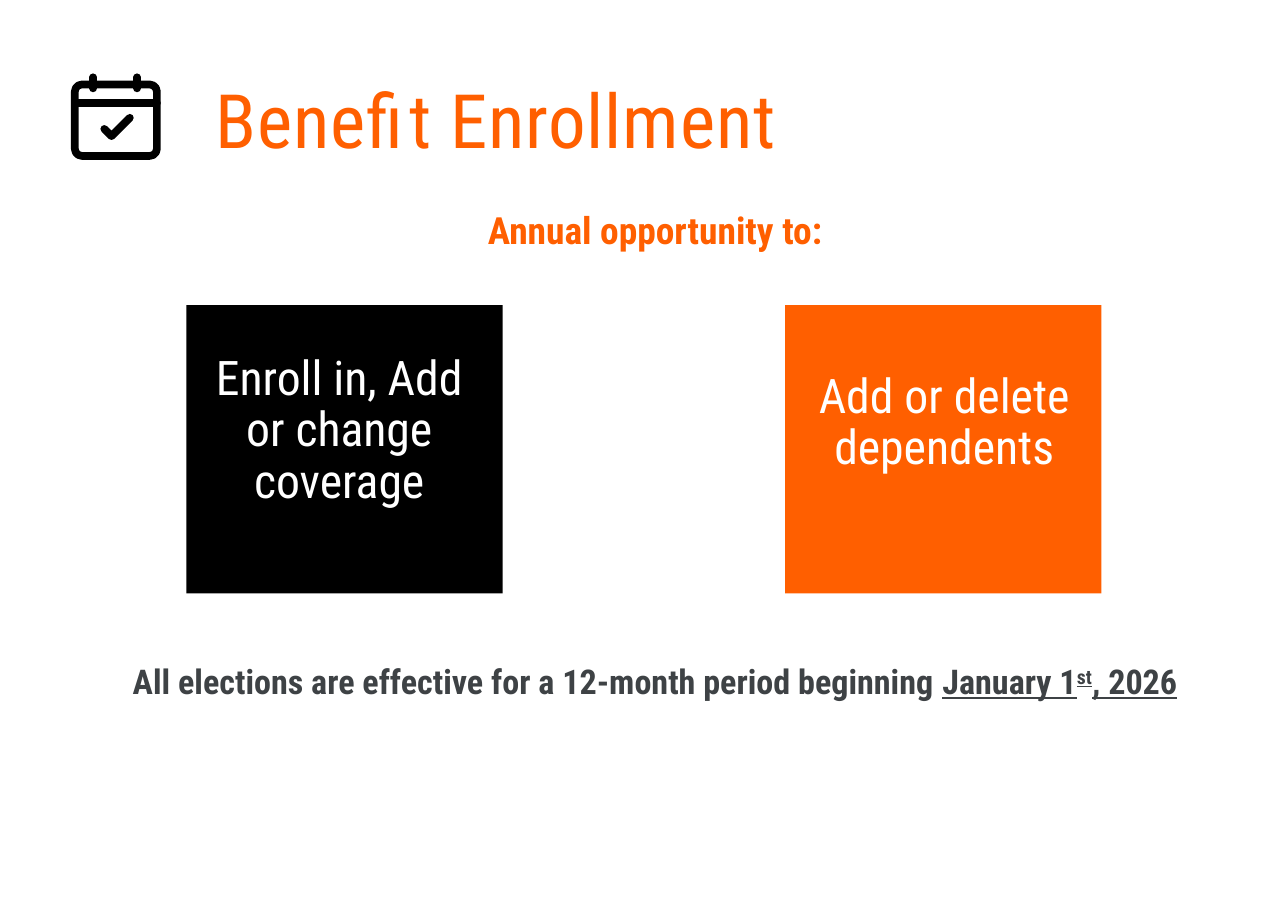
from lxml.etree import SubElement as Sub
from pptx import Presentation
from pptx.dml.color import RGBColor as RGB
from pptx.enum.shapes import MSO_CONNECTOR as Link, MSO_SHAPE as Kind
from pptx.enum.text import MSO_ANCHOR as Anchor, PP_ALIGN as Align
from pptx.oxml.ns import qn
from pptx.util import Cm, Pt

ORANGE = RGB(0xFF, 0x5F, 0x00)
BLACK = RGB(0x00, 0x00, 0x00)
WHITE = RGB(0xFF, 0xFF, 0xFF)
GREY = RGB(0x3E, 0x42, 0x45)
FONT = "Roboto Condensed"


def add_run(para, text, size, color, bold=False, under=False, **attrs):
    """Add one run; attrs are extra run properties such as spc or baseline."""
    run = para.add_run()
    run.text = text
    font = run.font
    font.name, font.size, font.bold = FONT, Pt(size), bold
    font.color.rgb = color
    if under:
        font.underline = True
    for name, value in attrs.items():
        run._r.get_or_add_rPr().set(name, str(value))


def add_text(slide, box, gap, align=Align.CENTER, top=0):
    """Add a text box and return its paragraph, ready for runs."""
    frame = slide.shapes.add_textbox(*map(Cm, box)).text_frame
    frame.word_wrap = True
    frame.margin_left = frame.margin_right = frame.margin_bottom = 0
    frame.margin_top = Cm(top)
    para = frame.paragraphs[0]
    para.alignment, para.line_spacing = align, gap
    return para


def add_rect(group, box, color):
    rect = group.shapes.add_shape(Kind.RECTANGLE, *map(Cm, box))
    rect.shadow.inherit = False
    rect.fill.solid()
    rect.fill.fore_color.rgb = color
    rect.line.fill.background()
    return rect


def add_tile(slide, left, color, label, text):
    """Group a colour square with the label panel that lies on it."""
    group = slide.shapes.add_group_shape()
    add_rect(group, (left, 6.32, 6.55, 5.97), color)
    frame = add_rect(group, label, color).text_frame
    frame.word_wrap = True
    frame.vertical_anchor = Anchor.MIDDLE
    para = frame.paragraphs[0]
    para.alignment, para.line_spacing = Align.CENTER, 0.9
    add_run(para, text, 28, WHITE)


def ink(shape):
    """Give a shape the thick, round black stroke of the icon."""
    shape.line.color.rgb = BLACK
    shape.line.width = Pt(4.5)
    stroke = shape.line._get_or_add_ln()
    stroke.set("cap", "rnd")
    Sub(stroke, qn("a:round"))


def add_line(group, *ends):
    line = group.shapes.add_connector(Link.STRAIGHT, *map(Cm, ends))
    ink(line)
    Sub(line._element.spPr, qn("a:effectLst"))


def add_icon(slide):
    group = slide.shapes.add_group_shape()
    page = group.shapes.add_shape(
        Kind.ROUNDED_RECTANGLE, Cm(1.55), Cm(1.75), Cm(1.7), Cm(1.48))
    page.adjustments[0] = 0.1
    pen = group.shapes.build_freeform(Cm(2.16), Cm(2.67))
    pen.add_line_segments(
        [(Cm(2.31), Cm(2.82)), (Cm(2.69), Cm(2.44))], close=False)
    for shape in (page, pen.convert_to_shape()):
        shape.fill.background()
        ink(shape)
        shape.shadow.inherit = False
    add_line(group, 1.55, 2.13, 3.25, 2.13)
    for ring in (1.93, 2.84):
        add_line(group, ring, 1.6, ring, 1.83)


def main():
    deck = Presentation()
    deck.slide_width, deck.slide_height = Cm(26.67), Cm(19.05)
    slide = deck.slides.add_slide(deck.slide_layouts[6])

    title = add_text(slide, (4.47, 1.7, 19.69, 1.27), 0.83, Align.LEFT, 0.13)
    add_run(title, "Benefit Enrollment", 44, ORANGE, spc=50)
    intro = add_text(slide, (1.5, 4.39, 24.13, 1), 0.9)
    add_run(intro, "Annual opportunity to:", 22, ORANGE, bold=True)

    add_tile(slide, 3.86, BLACK, (4.14, 7.19, 5.77, 3.48),
             "Enroll in, Add or change coverage")
    add_tile(slide, 16.26, ORANGE, (16.59, 7.57, 5.92, 2.41),
             "Add or delete dependents")

    note = add_text(slide, (1.5, 13.77, 24.13, 1), 0.9)
    add_run(note, "All elections are effective for a 12-month period beginning ",
            20, GREY, bold=True)
    add_run(note, "January 1", 20, GREY, bold=True, under=True)
    add_run(note, "st", 20, GREY, bold=True, under=True, baseline=30000)
    add_run(note, ", 2026", 20, GREY, bold=True, under=True)

    add_icon(slide)
    deck.save("out.pptx")


if __name__ == "__main__":
    main()
